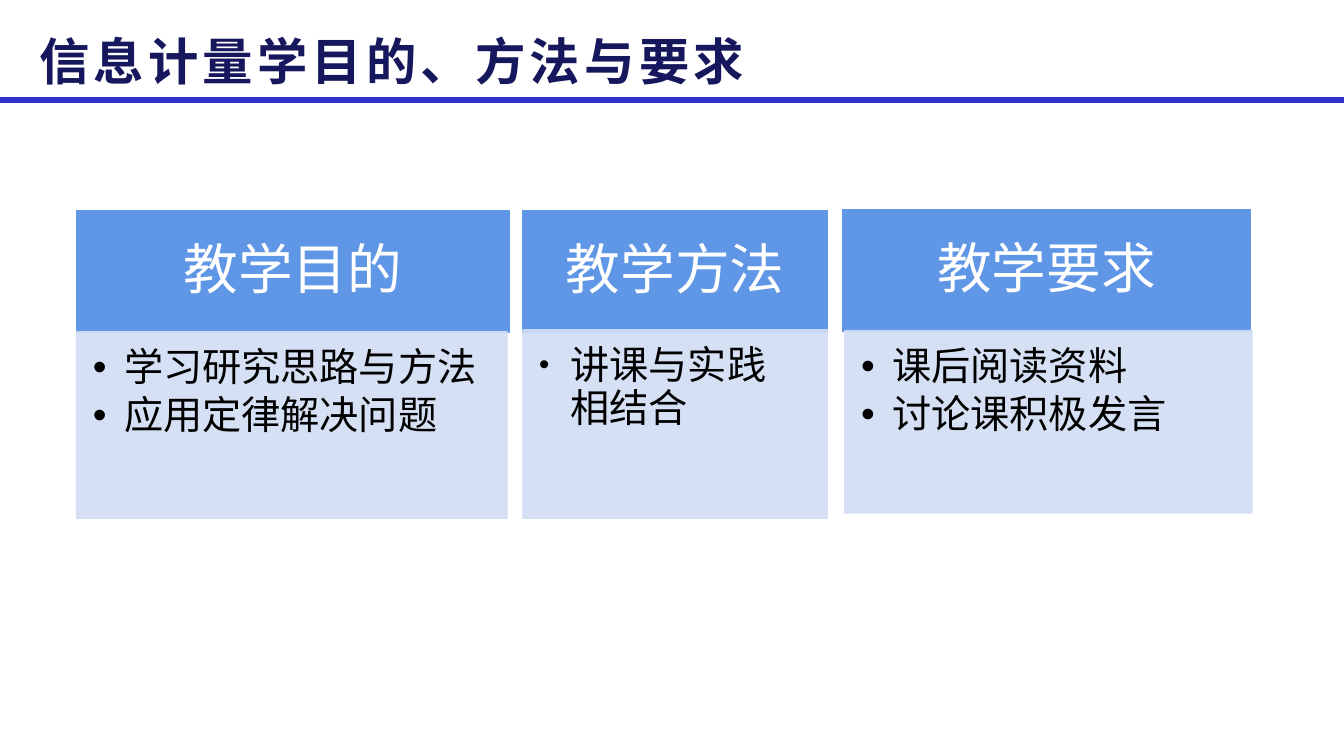
"""Build a slide on the aims, methods and requirements of informetrics."""
import lxml.etree
import pptx
import pptx.dml.color
import pptx.enum.shapes
import pptx.enum.text
import pptx.oxml.ns
import pptx.util

Cm = pptx.util.Cm
Pt = pptx.util.Pt
RGBColor = pptx.dml.color.RGBColor
qn = pptx.oxml.ns.qn

NAVY = RGBColor(0x17, 0x17, 0x5D)
RULE_BLUE = RGBColor(0x33, 0x33, 0xCC)
HEADER_BLUE = RGBColor(0x60, 0x96, 0xE6)
BODY_BLUE = RGBColor(0xD2, 0xDD, 0xF5)
WHITE = RGBColor(0xFF, 0xFF, 0xFF)
BLACK = RGBColor(0, 0, 0)


class SlideBuilder:
    """Hold the slide and its style, and draw each kind of element."""

    font_name = "Arial"

    def __init__(self, slide):
        self.slide = slide

    def style(self, paragraph, size, color, bold=False, tracking=0):
        for run in paragraph.runs:
            run.font.name = self.font_name
            run.font.size = Pt(size)
            run.font.bold = bold
            run.font.color.rgb = color
            properties = run._r.get_or_add_rPr()
            properties.set("lang", "zh-CN")
            if tracking:
                properties.set("spc", str(tracking * 100))

    def inset(self, frame, left, top, right, bottom):
        frame.word_wrap = True
        frame.margin_left, frame.margin_top = Cm(left), Cm(top)
        frame.margin_right, frame.margin_bottom = Cm(right), Cm(bottom)

    def rule(self, top, width):
        rule = self.slide.shapes.add_connector(
            pptx.enum.shapes.MSO_CONNECTOR.STRAIGHT, 0, Cm(top), width, Cm(top))
        rule.line.color.rgb = RULE_BLUE
        rule.line.width = Pt(4.5)
        lxml.etree.SubElement(rule._element.spPr, qn("a:effectLst"))

    def title(self, text, left, top, width, height):
        title = self.slide.shapes.add_textbox(Cm(left), Cm(top), Cm(width), Cm(height))
        frame = title.text_frame
        self.inset(frame, 0.25, 0.13, 0.25, 0.13)
        frame.vertical_anchor = pptx.enum.text.MSO_ANCHOR.MIDDLE
        frame.text = text
        self.style(frame.paragraphs[0], 36, NAVY, bold=True, tracking=3)

    def panel(self, color, left, top, width, height):
        panel = self.slide.shapes.add_shape(
            pptx.enum.shapes.MSO_SHAPE.RECTANGLE, Cm(left), Cm(top), Cm(width), Cm(height))
        panel.shadow.inherit = False
        panel.fill.solid()
        panel.fill.fore_color.rgb = color
        panel.line.color.rgb = color
        panel.line.width = Pt(1)
        return panel

    def header(self, text, *box):
        frame = self.panel(HEADER_BLUE, *box).text_frame
        self.inset(frame, 0.76, 0.43, 0.76, 0.43)
        frame.vertical_anchor = pptx.enum.text.MSO_ANCHOR.MIDDLE
        frame.text = text
        heading = frame.paragraphs[0]
        heading.alignment = pptx.enum.text.PP_ALIGN.CENTER
        heading.line_spacing = 0.9
        self.style(heading, 39, WHITE)

    def bullet(self, paragraph, size_percent):
        properties = paragraph._p.get_or_add_pPr()
        properties.set("marL", str(Cm(0.79)))
        properties.set("indent", str(Cm(-0.79)))
        for tag, key, value in (("a:buSzPct", "val", str(size_percent * 1000)),
                                ("a:buFont", "typeface", self.font_name),
                                ("a:buChar", "char", "•")):
            lxml.etree.SubElement(properties, qn(tag)).set(key, value)

    def body(self, points, bullet_size, *box):
        panel = self.panel(BODY_BLUE, *box)
        for color in panel._element.spPr.iter(qn("a:srgbClr")):
            lxml.etree.SubElement(color, qn("a:alpha")).set("val", "90000")
        frame = panel.text_frame
        self.inset(frame, 0.41, 0.41, 0.56, 0.61)
        frame.vertical_anchor = pptx.enum.text.MSO_ANCHOR.TOP
        frame.text = "\n".join(points)
        for point in frame.paragraphs:
            point.alignment = pptx.enum.text.PP_ALIGN.LEFT
            point.line_spacing = 0.9
            point.space_after = Pt(4)
            self.bullet(point, bullet_size)
            self.style(point, 28, BLACK)


def main():
    deck = pptx.Presentation()
    deck.slide_width, deck.slide_height = Cm(33.87), Cm(19.05)
    builder = SlideBuilder(deck.slides.add_slide(deck.slide_layouts[6]))
    builder.rule(2.52, deck.slide_width)
    builder.title("信息计量学目的、方法与要求", 0.74, 0.53, 29.46, 1.96)

    columns = (
        ("教学目的", (1.93, 5.31, 10.9, 3.07),
         ("学习研究思路与方法", "应用定律解决问题"), 100, (1.93, 8.36, 10.85, 4.7)),
        ("教学方法", (13.18, 5.31, 7.67, 3.07),
         ("讲课与实践相结合",), 75, (13.18, 8.31, 7.67, 4.75)),
        ("教学要求", (21.23, 5.28, 10.29, 3.07),
         ("课后阅读资料", "讨论课积极发言"), 100, (21.29, 8.33, 10.26, 4.6)),
    )
    for heading, header_box, points, bullet_size, body_box in columns:
        builder.header(heading, *header_box)
        builder.body(points, bullet_size, *body_box)
    deck.save("out.pptx")


if __name__ == "__main__":
    main()
